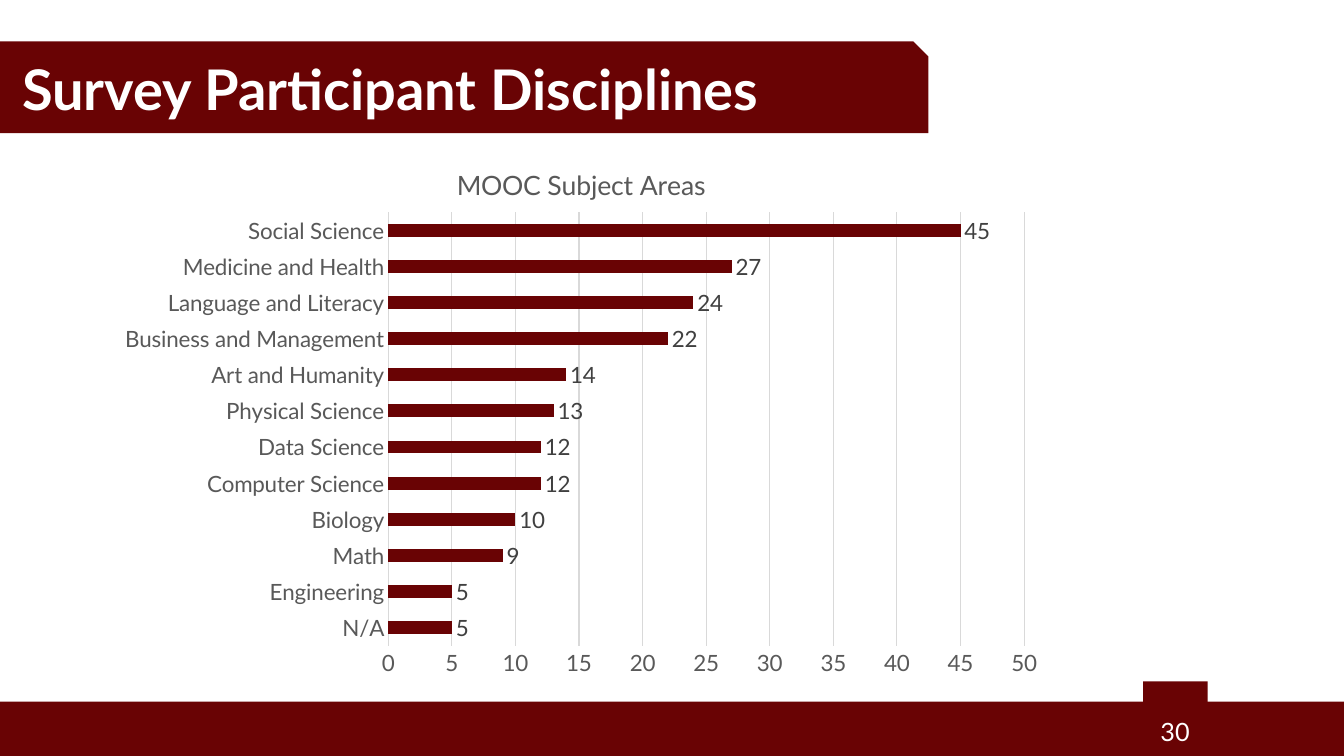
from dataclasses import dataclass
from typing import Any

from lxml.etree import SubElement
from pptx import Presentation
from pptx.chart.data import CategoryChartData
from pptx.dml.color import RGBColor
from pptx.enum.chart import XL_CHART_TYPE as Chart, XL_LABEL_POSITION as LabelPos, XL_TICK_MARK as Tick
from pptx.enum.shapes import MSO_SHAPE as Shape
from pptx.enum.text import MSO_ANCHOR as Anchor, MSO_AUTO_SIZE as AutoSize, PP_ALIGN as Align
from pptx.oxml.ns import qn
from pptx.util import Inches, Pt

COLORS = {"maroon": "690304", "white": "FFFFFF", "text": "595959", "label": "404040", "grid": "D9D9D9"}
FONT = "Lato"
WIDTH, HEIGHT = Inches(13.33), Inches(7.5)
SUBJECTS = {
    "N/A": 5,
    "Engineering": 5,
    "Math": 9,
    "Biology": 10,
    "Computer Science": 12,
    "Data Science": 12,
    "Physical Science": 13,
    "Art and Humanity": 14,
    "Business and Management": 22,
    "Language and Literacy": 24,
    "Medicine and Health": 27,
    "Social Science": 45,
}


@dataclass(frozen=True)
class Box:
    """Left, top, width and height in percent of the slide."""
    x: float
    y: float
    w: float
    h: float

    def emu(self) -> tuple[int, int, int, int]:
        return (int(WIDTH * self.x / 100), int(HEIGHT * self.y / 100),
                int(WIDTH * self.w / 100), int(HEIGHT * self.h / 100))


@dataclass(frozen=True)
class Band:
    box: Box
    kind: Shape


BANDS = [
    Band(Box(0, 92.8, 100, 7.2), Shape.RECTANGLE),
    Band(Box(85.05, 90.13, 4.8, 8.8), Shape.RECTANGLE),
    Band(Box(0, 5.47, 69.08, 12.13), Shape.SNIP_1_RECTANGLE),
]
TITLE = Box(0.9, 6.93, 70.73, 9.33)
NUMBER = Box(72.38, 94.13, 16.88, 5.33)
CHART = Box(7.88, 17.73, 70.73, 73.2)


def rgb(name: str) -> RGBColor:
    return RGBColor.from_string(COLORS[name])


def style(font: Any, size: float, color: str, bold: bool = False) -> None:
    font.name, font.size, font.bold = FONT, Pt(size), bold
    font.color.rgb = rgb(color)


def add_band(s: Any, band: Band) -> None:
    sp = s.shapes.add_shape(band.kind, *band.box.emu())
    sp.shadow.inherit = False
    sp.fill.solid()
    sp.fill.fore_color.rgb = rgb("maroon")
    sp.line.fill.background()


def write(sp: Any, text: str, size: float, align: Align, bold: bool = False) -> None:
    tf = sp.text_frame
    tf.word_wrap = True
    tf.auto_size = AutoSize.NONE
    tf.vertical_anchor = Anchor.MIDDLE
    p = tf.paragraphs[0]
    p.alignment = align
    r = p.add_run()
    r.text = text
    style(r.font, size, "white", bold)


def set_layout(parent: Any, index: int, **percent: float) -> None:
    for old in parent.findall(qn("c:layout")):
        parent.remove(old)
    layout = SubElement(parent, qn("c:layout"))
    parent.insert(index, layout)
    manual = SubElement(layout, qn("c:manualLayout"))
    if "w" in percent:
        SubElement(manual, qn("c:layoutTarget")).set("val", "inner")
    for key in ("x", "y"):
        SubElement(manual, qn(f"c:{key}Mode")).set("val", "edge")
    for key, value in percent.items():
        SubElement(manual, qn(f"c:{key}")).set("val", f"{value / 100:.4f}")


def style_line(line: Any) -> None:
    line.color.rgb = rgb("grid")
    line.width = Pt(0.75)


def add_subject_chart(s: Any) -> None:
    data = CategoryChartData()
    data.categories = list(SUBJECTS)
    data.add_series("Series 1", list(SUBJECTS.values()))
    chart = s.shapes.add_chart(Chart.BAR_CLUSTERED, *CHART.emu(), data).chart
    style(chart.font, 16, "text")
    chart.has_legend = False
    chart.has_title = True
    title = chart.chart_title
    r = title.text_frame.paragraphs[0].add_run()
    r.text = "MOOC Subject Areas"
    style(r.font, 19, "text")
    title.include_in_layout = False
    set_layout(title._element, 1, x=36.4, y=4.9)
    set_layout(chart._chartSpace.chart.plotArea, 0, x=29.7, y=14.1, w=66.9, h=78.4)

    for axis in (chart.category_axis, chart.value_axis):
        axis.major_tick_mark = axis.minor_tick_mark = Tick.NONE
        style(axis.tick_labels.font, 16, "text")
    style_line(chart.category_axis.format.line)
    values = chart.value_axis
    values.minimum_scale, values.maximum_scale, values.major_unit = 0, 50, 5
    values.format.line.fill.background()
    style_line(values.major_gridlines.format.line)

    plot = chart.plots[0]
    plot.gap_width = 182
    plot.vary_by_categories = False
    fill = plot.series[0].format.fill
    fill.solid()
    fill.fore_color.rgb = rgb("maroon")
    plot.has_data_labels = True
    labels = plot.data_labels
    labels.show_value = True
    labels.position = LabelPos.OUTSIDE_END
    style(labels.font, 16, "label")


def main() -> None:
    prs = Presentation()
    prs.slide_width, prs.slide_height = WIDTH, HEIGHT
    s = prs.slides.add_slide(prs.slide_layouts[5])
    title = s.shapes.title
    for band in BANDS:
        add_band(s, band)
    s.shapes._spTree.append(title._element)
    title.left, title.top, title.width, title.height = TITLE.emu()
    write(title, "Survey Participant Disciplines", 40, Align.LEFT, bold=True)
    write(s.shapes.add_textbox(*NUMBER.emu()), "30", 18, Align.RIGHT)
    add_subject_chart(s)
    prs.save("out.pptx")


if __name__ == "__main__":
    main()
